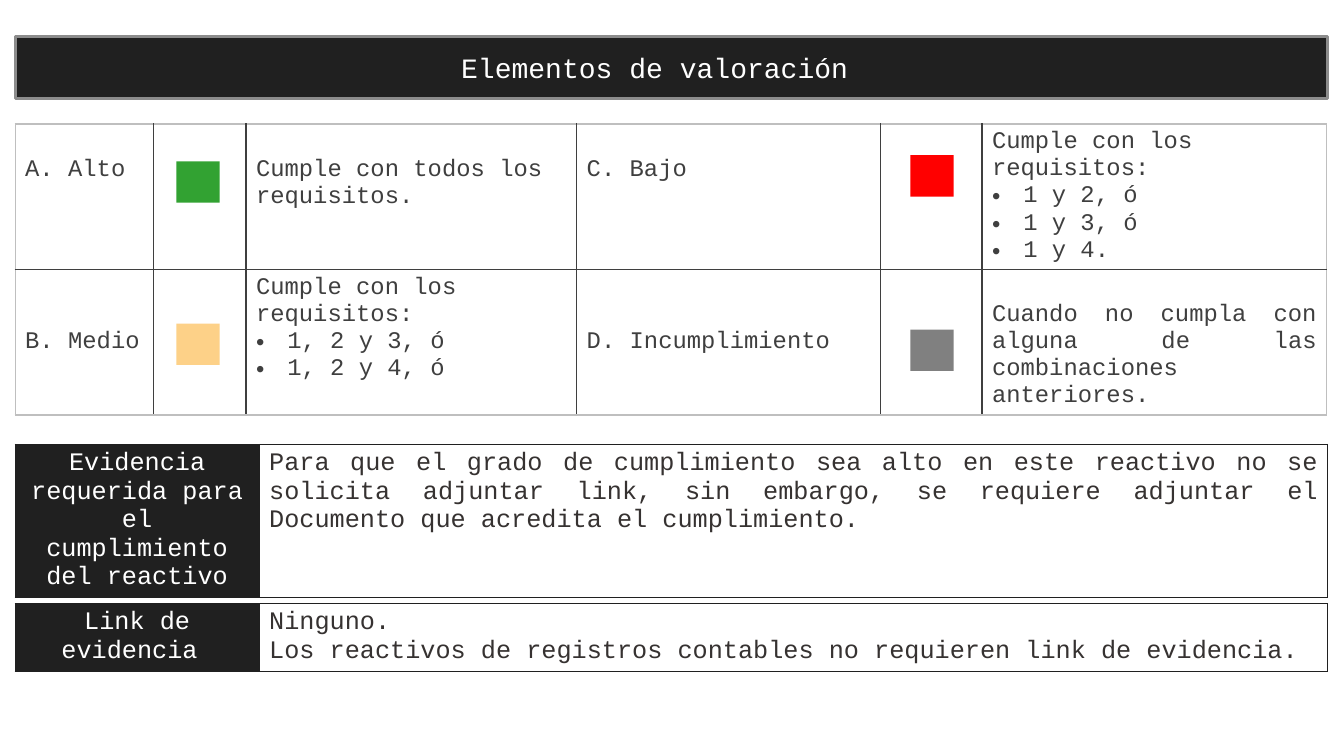
"""Build the slide of rating levels and the proof each one needs."""
import pptx
import pptx.util
import pptx.dml.color
import pptx.enum.shapes
import pptx.enum.text
import pptx.oxml.ns
from lxml import etree

Inches = pptx.util.Inches
Pt = pptx.util.Pt
ALIGN = pptx.enum.text.PP_ALIGN
DARK, GREY, PALE, INK, WHITE = "202020", "3F3F3F", "BFBFBF", "363231", "FFFFFF"
LEFT, WIDTH = 0.15, 13.02
LINE = 0.27


def color(code):
    """Turn a hex string into a colour."""
    return pptx.dml.color.RGBColor.from_string(code)


def add_node(parent, tag, **attrs):
    """Append a drawing element to its parent."""
    return etree.SubElement(parent, pptx.oxml.ns.qn(tag), attrs)


class Board:
    """Hold the style and the current slide."""

    def __init__(self, deck, font):
        """Open a blank slide."""
        self.slide = deck.slides.add_slide(deck.slide_layouts[6])
        self.font = font

    def label(self, frame, text, size, ink, align=ALIGN.LEFT):
        """Set the text, with a bullet on each line that starts with one."""
        frame.word_wrap = True
        frame.text = text
        for para in frame.paragraphs:
            para.alignment = align
            if para.text.startswith("•"):
                para.text = para.text[1:]
                props = para._p.get_or_add_pPr()
                props.set("marL", str(Inches(0.31)))
                props.set("indent", str(Inches(-0.31)))
                add_node(props, "a:buFont", typeface="Arial")
                add_node(props, "a:buChar", char="•")
            for run in para.runs:
                run.font.name = self.font
                run.font.size = Pt(size)
                run.font.color.rgb = color(ink)

    def box(self, x, y, w, h, fill, edge=None):
        """Draw a filled box, with an edge if asked."""
        kind = pptx.enum.shapes.MSO_SHAPE.RECTANGLE
        shape = self.slide.shapes.add_shape(kind, Inches(x), Inches(y), Inches(w), Inches(h))
        shape.shadow.inherit = False
        shape.fill.solid()
        shape.fill.fore_color.rgb = color(fill)
        if edge:
            shape.line.color.rgb = color(edge)
            shape.line.width = Pt(2.25)
        else:
            shape.line.fill.background()
        return shape

    def title(self, text, y, h):
        """Draw the heading bar."""
        frame = self.box(LEFT, y, WIDTH, h, DARK, "8C8C8C").text_frame
        frame.margin_right = Inches(0.43)
        frame.vertical_anchor = pptx.enum.text.MSO_ANCHOR.MIDDLE
        self.label(frame, text, 20, WHITE, ALIGN.CENTER)

    def table(self, y, cols, rows, inner, outer):
        """Draw an empty table with plain lines."""
        high = Inches(sum(rows))
        frame = self.slide.shapes.add_table(
            len(rows), len(cols), Inches(LEFT), Inches(y), Inches(WIDTH), high)
        table = frame.table
        table.first_row = table.horz_banding = False
        for col, size in zip(table.columns, cols):
            col.width = Inches(size)
        for row, size in zip(table.rows, rows):
            row.height = Inches(size)
        for r in range(len(rows)):
            for c in range(len(cols)):
                cell = table.cell(r, c)
                sides = {"L": c == 0, "R": c == len(cols) - 1,
                         "T": r == 0, "B": r == len(rows) - 1}
                self.lines(cell, {s: outer if end else inner for s, end in sides.items()})
                cell.fill.background()
        return table

    def lines(self, cell, sides):
        """Set the colour of each side of a cell."""
        props = cell._tc.get_or_add_tcPr()
        for side, code in sides.items():
            line = add_node(props, "a:ln" + side, w=str(Pt(1)))
            add_node(add_node(line, "a:solidFill"), "a:srgbClr", val=code)

    def levels(self, y, cols, rows, items):
        """Fill the table of levels; each item gives text, lines to skip and align."""
        table = self.table(y, cols, rows, GREY, PALE)
        for (r, c), (text, skip, align) in items.items():
            cell = table.cell(r, c)
            cell.margin_top = Inches(0.05 + skip * LINE)
            self.label(cell.text_frame, text, 17, GREY, align)

    def proof(self, y, h, name, text):
        """Draw a one-row table with a dark label."""
        table = self.table(y, [2.42, 10.6], [h], DARK, DARK)
        head, body = table.cell(0, 0), table.cell(0, 1)
        head.fill.solid()
        head.fill.fore_color.rgb = color(DARK)
        self.label(head.text_frame, name, 18, WHITE, ALIGN.CENTER)
        self.label(body.text_frame, text, 18, INK, ALIGN.JUSTIFY)


def main():
    """Build and save the slide."""
    deck = pptx.Presentation()
    deck.slide_width, deck.slide_height = Inches(13.33), Inches(7.5)
    board = Board(deck, "Courier New")
    board.title("Elementos de valoración", 0.36, 0.62)
    left, just = ALIGN.LEFT, ALIGN.JUSTIFY
    meets = "Cumple con los requisitos:\n"
    board.levels(1.23, [1.37, 0.92, 3.28, 3.01, 1.01, 3.42], [1.44, 1.44], {
        (0, 0): ("A. Alto", 1, left),
        (0, 2): ("Cumple con todos los requisitos.", 1, left),
        (0, 3): ("C. Bajo", 1, left),
        (0, 5): (meets + "•1 y 2, ó\n•1 y 3, ó\n•1 y 4.", 0, left),
        (1, 0): ("B. Medio", 2, left),
        (1, 2): (meets + "•1, 2 y 3, ó\n•1, 2 y 4, ó", 0, left),
        (1, 3): ("D. Incumplimiento", 2, left),
        (1, 5): ("Cuando no cumpla con alguna de las combinaciones anteriores.", 1, just),
    })
    for x, y, fill in [(1.75, 1.6, "32A232"), (9.03, 1.54, "FF0000"),
                       (1.75, 3.21, "FDD188"), (9.03, 3.27, "808080")]:
        board.box(x, y, 0.43, 0.41, fill)
    board.proof(4.41, 1.52, "Evidencia requerida para el cumplimiento del reactivo",
                "Para que el grado de cumplimiento sea alto en este reactivo no se solicita "
                "adjuntar link, sin embargo, se requiere adjuntar el Documento que acredita "
                "el cumplimiento.")
    board.proof(5.99, 0.67, "Link de evidencia ",
                "Ninguno.\nLos reactivos de registros contables no requieren link de evidencia.")
    deck.save("out.pptx")


if __name__ == "__main__":
    main()
